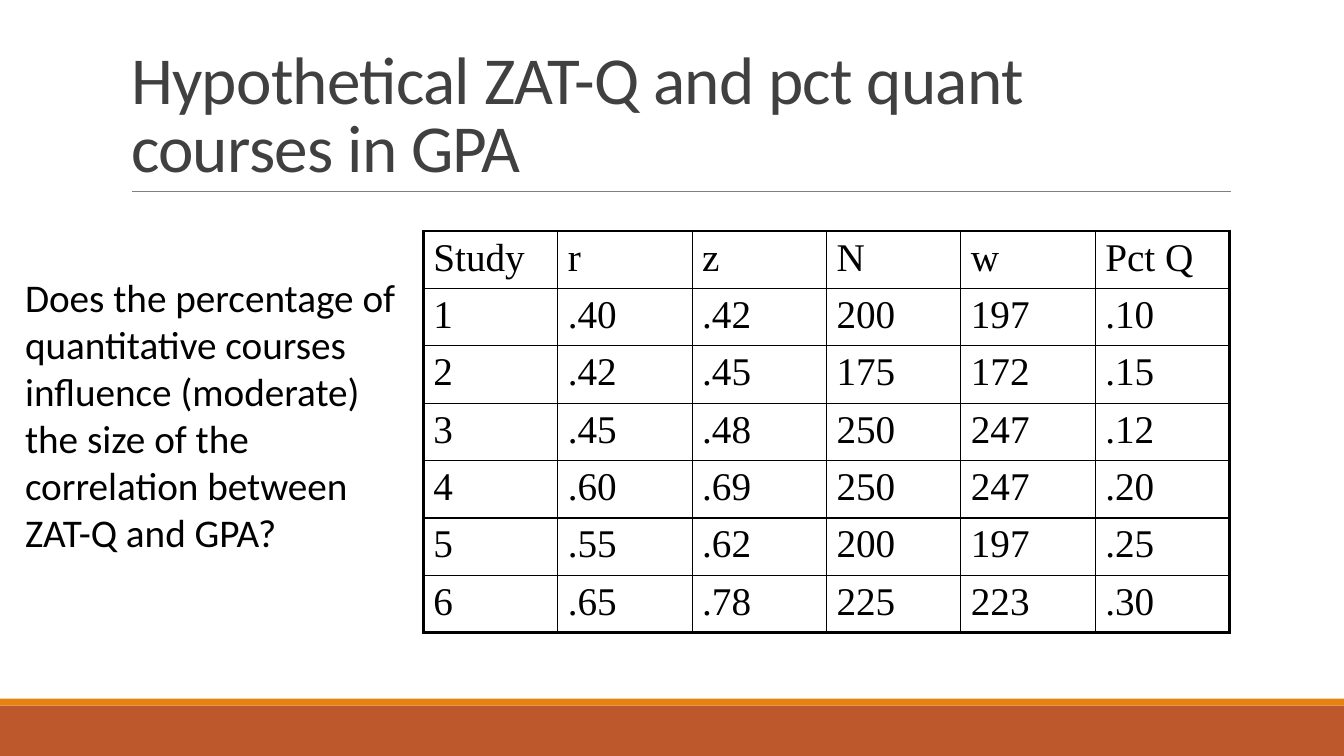
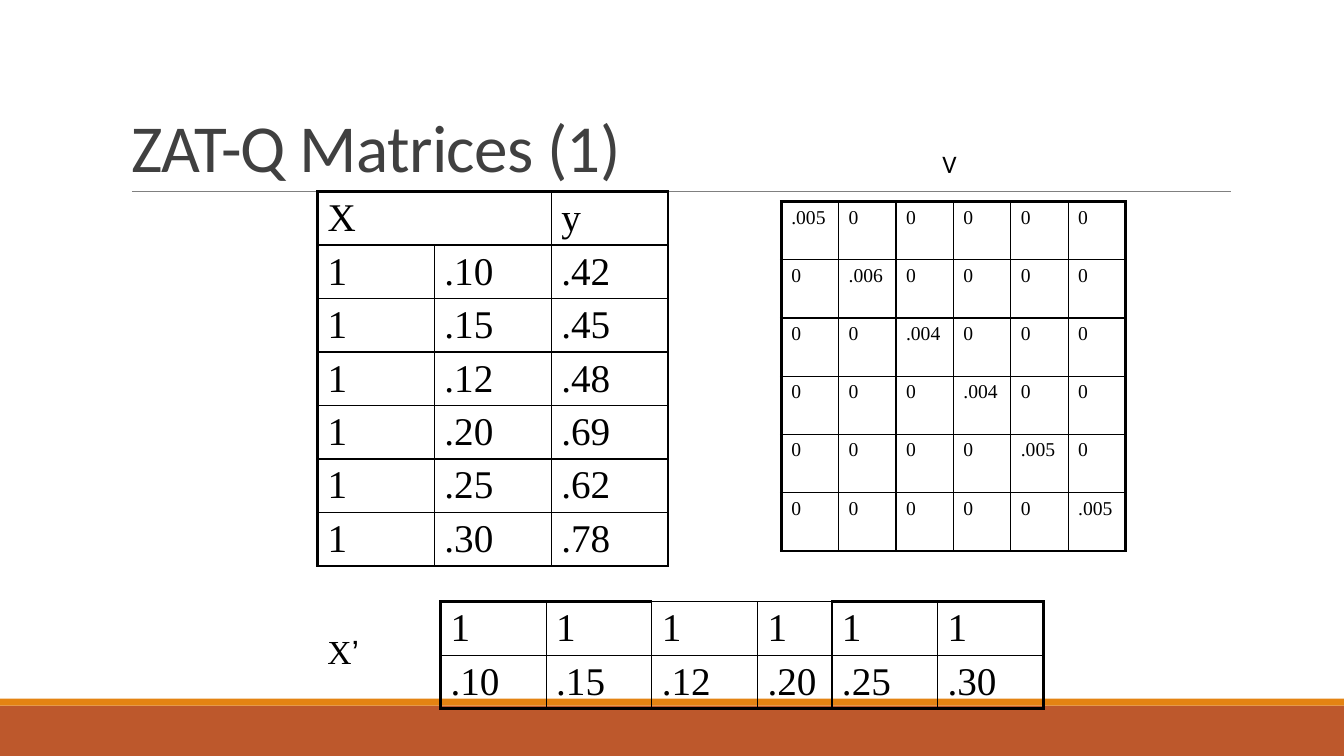
from lxml import etree
from pptx import Presentation
from pptx.dml.color import RGBColor
from pptx.enum.shapes import MSO_CONNECTOR, MSO_SHAPE
from pptx.enum.text import MSO_ANCHOR, MSO_AUTO_SIZE, PP_ALIGN
from pptx.oxml.ns import qn
from pptx.util import Pt

BLACK = RGBColor(0x00, 0x00, 0x00)
TITLE_GREY = RGBColor(0x40, 0x40, 0x40)
RULE_GREY = RGBColor(0x80, 0x80, 0x80)
RUST = RGBColor(0xBD, 0x58, 0x2C)
ORANGE = RGBColor(0xE4, 0x83, 0x12)
SANS, SERIF = "Calibri", "Times New Roman"
THIN, THICK = Pt(1), Pt(2.25)
WIDTH, HEIGHT = 960, 540


def add_grid(s, left, top, col_widths, row_height, rows, size, thin_top=()):
    """Add a table with a thick frame; columns in thin_top keep a thin top edge."""
    last_row, last_col = len(rows) - 1, len(col_widths) - 1
    frame = s.shapes.add_table(len(rows), len(col_widths), Pt(left), Pt(top),
                               Pt(sum(col_widths)), Pt(row_height * len(rows)))
    table = frame.table
    table.first_row = table.horz_banding = False
    for column, width in zip(table.columns, col_widths):
        column.width = Pt(width)
    for i, row in enumerate(rows):
        table.rows[i].height = Pt(row_height)
        for j, value in enumerate(row):
            cell = table.cell(i, j)
            p = cell.text_frame.paragraphs[0]
            p.text = value
            p.font.name, p.font.size, p.font.color.rgb = SERIF, Pt(size), BLACK
            tcPr = cell._tc.get_or_add_tcPr()
            on_frame = {"lnL": j == 0, "lnR": j == last_col,
                        "lnT": i == 0 and j not in thin_top, "lnB": i == last_row}
            for edge, thick in on_frame.items():
                ln = etree.SubElement(tcPr, qn(f"a:{edge}"), w=str(THICK if thick else THIN))
                fill = etree.SubElement(ln, qn("a:solidFill"))
                etree.SubElement(fill, qn("a:srgbClr"), val=str(BLACK))
            cell.fill.background()
    return table


def add_text(s, left, top, width, height, runs, size, wrap=False):
    """Add a one-paragraph text box from (text, font name) pairs."""
    tf = s.shapes.add_textbox(Pt(left), Pt(top), Pt(width), Pt(height)).text_frame
    tf.word_wrap = wrap
    tf.auto_size = MSO_AUTO_SIZE.SHAPE_TO_FIT_TEXT
    p = tf.paragraphs[0]
    p.font.size, p.font.color.rgb = Pt(size), BLACK
    for text, font in runs:
        r = p.add_run()
        r.text, r.font.name = text, font


prs = Presentation()
prs.slide_width, prs.slide_height = Pt(WIDTH), Pt(HEIGHT)

# Title-only layout: title place, bands and rule shared by all slides
layout = prs.slide_layouts[5]
for ph in list(layout.placeholders):
    if ph.placeholder_format.idx:
        ph.element.getparent().remove(ph.element)
    else:
        ph.left, ph.top, ph.width, ph.height = Pt(86.4), Pt(22.6), Pt(792), Pt(114.2)

slides = []
for title in ("Hypothetical ZAT-Q and pct quant courses in GPA", "ZAT-Q Matrices (1)"):
    s = prs.slides.add_slide(layout)
    tf = s.shapes.title.text_frame
    tf.text = title
    tf.word_wrap, tf.auto_size = True, MSO_AUTO_SIZE.NONE
    tf.vertical_anchor = MSO_ANCHOR.BOTTOM
    p = tf.paragraphs[0]
    p.alignment, p.line_spacing = PP_ALIGN.LEFT, 0.85
    p.font.name, p.font.size, p.font.color.rgb = SANS, Pt(48), TITLE_GREY
    p.runs[0]._r.get_or_add_rPr().set("spc", "-50")
    slides.append(s)
data_slide, matrix_slide = slides

decor = []
for top, height, color in ((504, 36, RUST), (499, 5, ORANGE)):
    band = data_slide.shapes.add_shape(MSO_SHAPE.RECTANGLE, 0, Pt(top), Pt(WIDTH), Pt(height))
    band.shadow.inherit = False
    band.fill.solid()
    band.fill.fore_color.rgb = color
    band.line.fill.background()
    decor.append(band)
rule = data_slide.shapes.add_connector(MSO_CONNECTOR.STRAIGHT, Pt(94.3), Pt(136.8),
                                       Pt(879), Pt(136.8))
rule.line.color.rgb, rule.line.width = RULE_GREY, Pt(0.5)
etree.SubElement(rule.element.spPr, qn("a:effectLst"))
decor.append(rule)
for shape in decor:
    layout.shapes.element.append(shape.element)

# Slide 1: study data
header = ("Study", "r", "z", "N", "w", "Pct Q")
studies = [
    ("1", ".40", ".42", "200", "197", ".10"),
    ("2", ".42", ".45", "175", "172", ".15"),
    ("3", ".45", ".48", "250", "247", ".12"),
    ("4", ".60", ".69", "250", "247", ".20"),
    ("5", ".55", ".62", "200", "197", ".25"),
    ("6", ".65", ".78", "225", "223", ".30"),
]
add_grid(data_slide, 302.4, 165, [96] * 6, 41, [header] + studies, 28)
add_text(data_slide, 10.8, 191.5, 291.6, 211,
         [("Does the percentage of quantitative courses influence (moderate) the size "
           "of the correlation between ZAT-Q and GPA?", SANS)], 28, wrap=True)

# Slide 2: matrices built from the study data
z_values = [study[2] for study in studies]
pct_quant = [study[5] for study in studies]
ones = ["1"] * len(studies)
variances = (".005", ".006", ".004", ".004", ".005", ".005")

design = add_grid(matrix_slide, 226.8, 136.8, [83.5] * 3, 38.2,
                  [("X", "", "y"), *zip(ones, pct_quant, z_values)], 28)
design.cell(0, 0).merge(design.cell(0, 1))
add_grid(matrix_slide, 314.6, 429.8, [75.5, 75.5, 75.5, 53.2, 75.5, 75.5], 38.2,
         [ones, pct_quant], 28, thin_top=(2, 3))
add_text(matrix_slide, 226.8, 447, 44, 36, [("X", SERIF), ("’", "Arial")], 24)
diagonal = [[v if i == j else "0" for j in range(len(variances))]
            for i, v in enumerate(variances)]
add_grid(matrix_slide, 558, 144, [41] * 6, 41.6, diagonal, 14)
add_text(matrix_slide, 666, 102.2, 25.2, 29, [("V", SANS)], 18)

prs.save("out.pptx")
